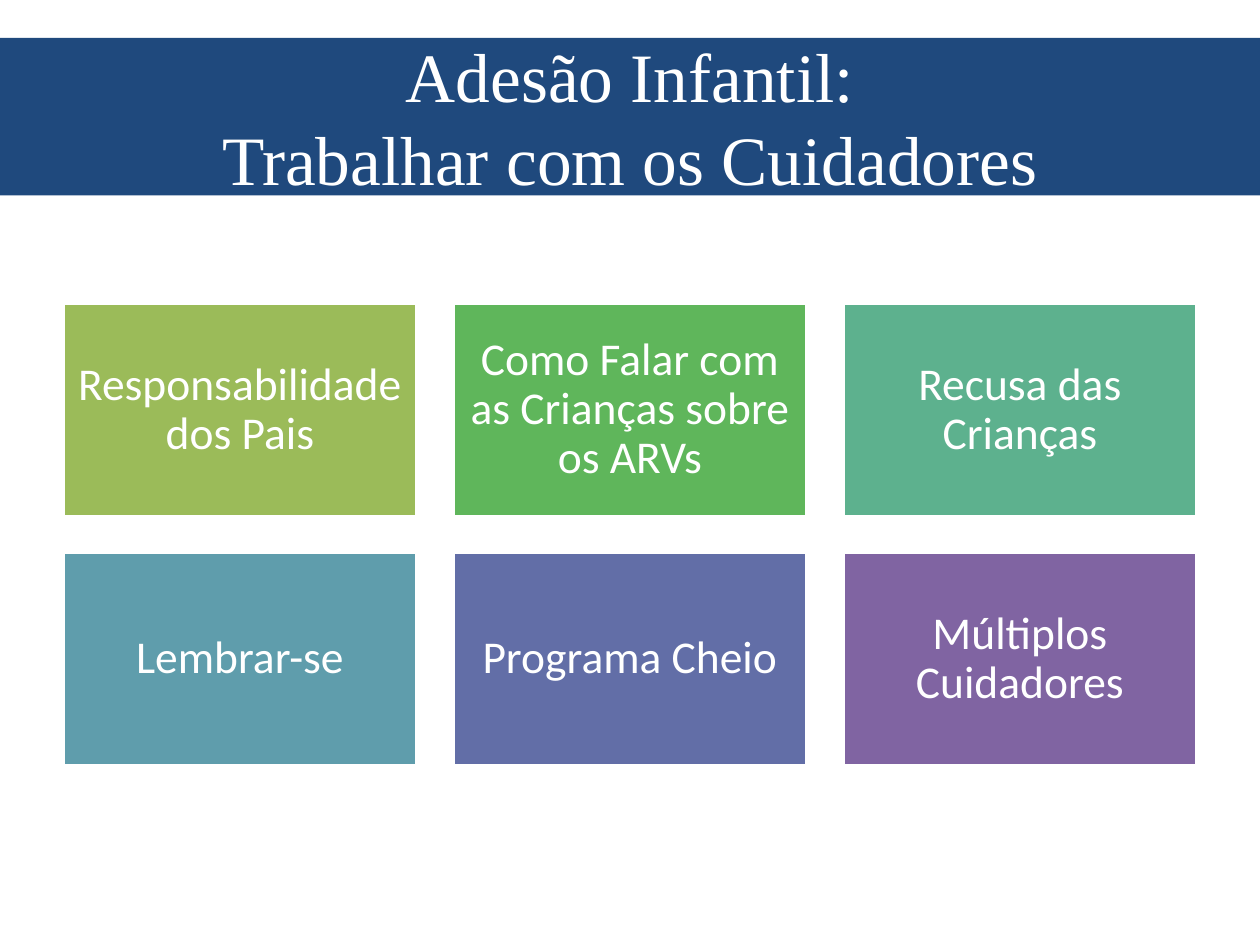
import pptx
import pptx.dml.color
import pptx.enum.shapes
import pptx.enum.text
import pptx.util

TOPICS = [
    ("Responsabilidade dos Pais", "9BBB59"),
    ("Como Falar com as Crianças sobre os ARVs", "5FB65B"),
    ("Recusa das Crianças", "5DB18E"),
    ("Lembrar-se", "5F9DAC"),
    ("Programa Cheio", "626EA7"),
    ("Múltiplos Cuidadores", "8064A2"),
]
COLUMNS = 3


def color(hex_code):
    return pptx.dml.color.RGBColor.from_string(hex_code)


class TopicSlide:
    WIDTH, HEIGHT = pptx.util.Inches(10), pptx.util.Inches(7.5)
    LEFT, TOP = pptx.util.Inches(0.5), pptx.util.Inches(2.41)
    CARD_WIDTH, CARD_HEIGHT = pptx.util.Inches(2.81), pptx.util.Inches(1.69)
    GAP = (WIDTH - 2 * LEFT - COLUMNS * CARD_WIDTH) // (COLUMNS - 1)
    WHITE, NAVY = "FFFFFF", "1F497D"

    def __init__(self, deck):
        deck.slide_width, deck.slide_height = self.WIDTH, self.HEIGHT
        self.slide = deck.slides.add_slide(deck.slide_layouts[5])

    def label(self, shape, text, font, size, spacing):
        frame = shape.text_frame
        frame.text = text
        frame.word_wrap = True
        frame.auto_size = pptx.enum.text.MSO_AUTO_SIZE.NONE
        frame.vertical_anchor = pptx.enum.text.MSO_ANCHOR.MIDDLE
        paragraph = frame.paragraphs[0]
        paragraph.alignment = pptx.enum.text.PP_ALIGN.CENTER
        paragraph.line_spacing = spacing
        paragraph.font.name = font
        paragraph.font.size = pptx.util.Pt(size)
        paragraph.font.color.rgb = color(self.WHITE)

    def fill(self, shape, hex_code):
        shape.fill.solid()
        shape.fill.fore_color.rgb = color(hex_code)

    def title(self, text):
        banner = self.slide.shapes.title
        banner.left, banner.top = 0, int(self.HEIGHT * 0.04)
        banner.width, banner.height = self.WIDTH, self.HEIGHT // 6
        self.fill(banner, self.NAVY)
        self.label(banner, text, "Times New Roman", 39.6, pptx.util.Pt(47.5))

    def card(self, column, row, text, hex_code):
        card = self.slide.shapes.add_shape(
            pptx.enum.shapes.MSO_SHAPE.RECTANGLE,
            self.LEFT + column * (self.CARD_WIDTH + self.GAP),
            self.TOP + row * (self.CARD_HEIGHT + self.GAP),
            self.CARD_WIDTH,
            self.CARD_HEIGHT,
        )
        card.shadow.inherit = False
        self.fill(card, hex_code)
        card.line.color.rgb = color(self.WHITE)
        card.line.width = pptx.util.Pt(2)
        frame = card.text_frame
        frame.margin_left = frame.margin_right = pptx.util.Inches(0.11)
        frame.margin_top = frame.margin_bottom = pptx.util.Inches(0.11)
        self.label(card, text, "Calibri", 26, 0.9)


def main():
    deck = pptx.Presentation()
    page = TopicSlide(deck)
    page.title("Adesão Infantil:\vTrabalhar com os Cuidadores")
    for index, (topic, hex_code) in enumerate(TOPICS):
        row, column = divmod(index, COLUMNS)
        page.card(column, row, topic, hex_code)
    deck.save("out.pptx")


if __name__ == "__main__":
    main()
